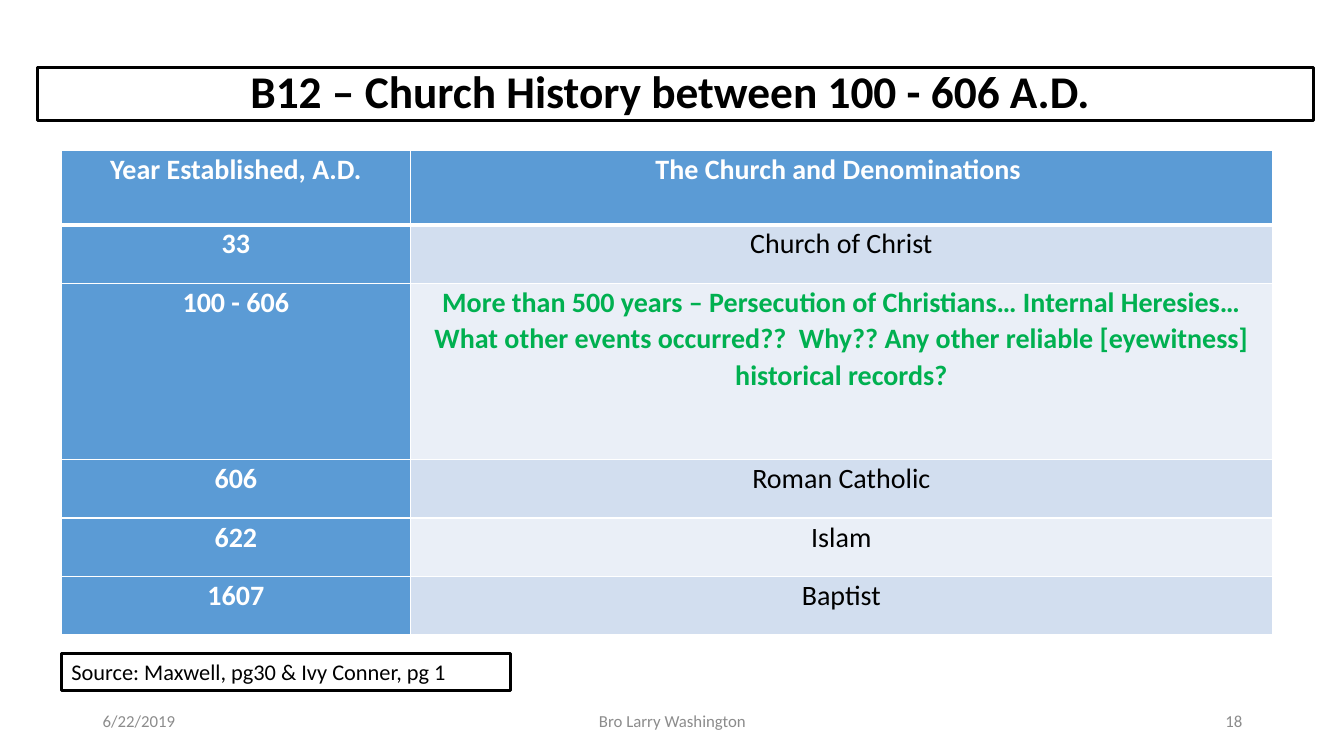
from dataclasses import dataclass

from lxml import etree
from pptx import Presentation
from pptx.dml.color import RGBColor
from pptx.enum.shapes import MSO_SHAPE
from pptx.enum.text import MSO_ANCHOR, MSO_AUTO_SIZE, PP_ALIGN
from pptx.oxml.ns import qn
from pptx.util import Inches, Pt

LEFT, CENTER, RIGHT = PP_ALIGN.LEFT, PP_ALIGN.CENTER, PP_ALIGN.RIGHT
TOP, MIDDLE = MSO_ANCHOR.TOP, MSO_ANCHOR.MIDDLE
NO_FIT = MSO_AUTO_SIZE.NONE
RECTANGLE = MSO_SHAPE.RECTANGLE
TITLE_ONLY = 5


@dataclass(frozen=True)
class Theme:
    font: str = "Calibri"
    black: str = "000000"
    white: str = "FFFFFF"
    grey: str = "8C8C8C"
    green: str = "00B050"
    blue: str = "5B9BD5"
    bands: tuple = ("D2DEEF", "EAEFF7")
    title_size: float = 32.4
    table_size: float = 20
    source_size: float = 16
    footer_size: float = 12
    frame_width: float = 2.25
    grid_width: float = 1
    header_rule_width: float = 3


THEME = Theme()

COLUMN_WIDTHS = (3.46, 8.55)
ROW_HEIGHTS = (0.74, 0.58, 1.75, 0.58, 0.58, 0.58)
HEADINGS = ("Year Established, A.D.", "The Church and Denominations ")
QUESTIONS = (
    "More than 500 years – Persecution of Christians… Internal Heresies… "
    "What other events occurred??  Why?? Any other reliable [eyewitness] "
    "historical records?"
)
HISTORY = (
    ("33", "Church of Christ"),
    ("100 - 606", QUESTIONS),
    ("606", "Roman Catholic"),
    ("622", "Islam"),
    ("1607", "Baptist"),
)
FOOTERS = (
    (0.92, 3, "6/22/2019", LEFT),
    (4.42, 4.5, "Bro Larry Washington", CENTER),
    (9.42, 3, "18", RIGHT),
)


def apply(target, formats):
    for name, value in formats.items():
        setattr(target, name, value)


def write(frame, text, size, color, bold=False, align=LEFT, spacing=1.0):
    paragraph = frame.paragraphs[0]
    apply(paragraph, {"alignment": align, "line_spacing": spacing})
    run = paragraph.add_run()
    run.text = text
    apply(run.font, {"name": THEME.font, "size": Pt(size), "bold": bold})
    run.font.color.rgb = RGBColor.from_string(color)


def set_frame(frame, anchor):
    apply(frame, {"word_wrap": True, "auto_size": NO_FIT, "vertical_anchor": anchor})


def outline(shape):
    shape.fill.background()
    shape.line.color.rgb = RGBColor.from_string(THEME.black)
    shape.line.width = Pt(THEME.frame_width)


def add_title(slide, text):
    title = slide.shapes.title
    apply(title, {"left": Inches(0.37), "top": Inches(0.67),
                  "width": Inches(12.66), "height": Inches(0.53)})
    outline(title)
    set_frame(title.text_frame, MIDDLE)
    write(title.text_frame, text, THEME.title_size, THEME.black, True, CENTER, 0.9)


def add_footer(slide, left, width, text, align):
    footer = slide.shapes.add_textbox(
        Inches(left), Inches(6.95), Inches(width), Inches(0.4))
    set_frame(footer.text_frame, MIDDLE)
    write(footer.text_frame, text, THEME.footer_size, THEME.grey, align=align)


def add_source(slide, text):
    source = slide.shapes.add_shape(
        RECTANGLE, Inches(0.61), Inches(6.48), Inches(4.45), Inches(0.37))
    source.shadow.inherit = False
    outline(source)
    set_frame(source.text_frame, TOP)
    write(source.text_frame, text, THEME.source_size, THEME.black)


def add_borders(cell, widths):
    properties = cell._tc.get_or_add_tcPr()
    for side, width in widths.items():
        border = etree.SubElement(properties, qn(f"a:ln{side}"), w=str(Pt(width)))
        fill = etree.SubElement(border, qn("a:solidFill"))
        etree.SubElement(fill, qn("a:srgbClr"), val=THEME.white)


def fill_cell(cell, text, fill, color, bold, widths):
    apply(cell, {"margin_left": Inches(0.07), "margin_right": Inches(0.07),
                 "margin_top": 0, "margin_bottom": 0, "vertical_anchor": TOP})
    add_borders(cell, widths)
    cell.fill.solid()
    cell.fill.fore_color.rgb = RGBColor.from_string(fill)
    write(cell.text_frame, text, THEME.table_size, color, bold, CENTER, 1.07)


def add_history(slide):
    table = slide.shapes.add_table(
        len(ROW_HEIGHTS), len(COLUMN_WIDTHS), Inches(0.61), Inches(1.49),
        Inches(sum(COLUMN_WIDTHS)), Inches(sum(ROW_HEIGHTS))).table
    for column, width in zip(table.columns, COLUMN_WIDTHS):
        column.width = Inches(width)
    for row, height in zip(table.rows, ROW_HEIGHTS):
        row.height = Inches(height)

    grid = dict.fromkeys("LRTB", THEME.grid_width)
    header_grid = {**grid, "B": THEME.header_rule_width}
    first_grid = {**grid, "T": THEME.header_rule_width}
    for column, heading in enumerate(HEADINGS):
        fill_cell(table.cell(0, column), heading, THEME.blue, THEME.white, True, header_grid)
    for row, (year, event) in enumerate(HISTORY, start=1):
        widths = first_grid if row == 1 else grid
        asks = event == QUESTIONS
        fill_cell(table.cell(row, 0), year, THEME.blue, THEME.white, True, widths)
        fill_cell(table.cell(row, 1), event, THEME.bands[(row - 1) % 2],
                  THEME.green if asks else THEME.black, asks, widths)


def main():
    deck = Presentation()
    apply(deck, {"slide_width": Inches(13.33), "slide_height": Inches(7.5)})
    slide = deck.slides.add_slide(deck.slide_layouts[TITLE_ONLY])
    add_title(slide, "B12 – Church History between 100 - 606 A.D. ")
    for footer in FOOTERS:
        add_footer(slide, *footer)
    add_history(slide)
    add_source(slide, "Source: Maxwell, pg30 & Ivy Conner, pg 1")
    deck.save("out.pptx")


if __name__ == "__main__":
    main()
